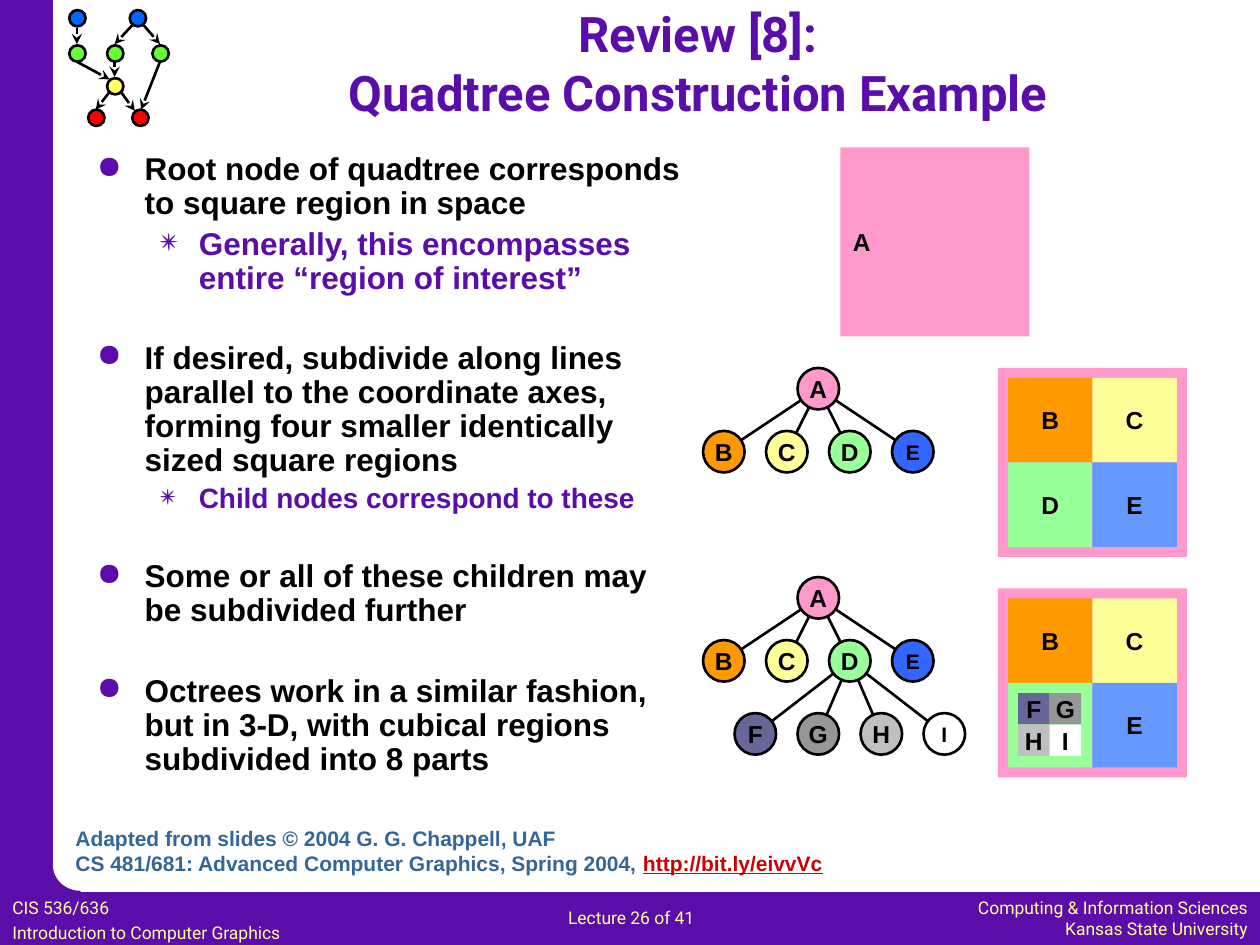
from lxml.etree import SubElement
from pptx import Presentation
from pptx.dml.color import RGBColor
from pptx.enum.shapes import MSO_CONNECTOR, MSO_SHAPE
from pptx.enum.text import MSO_ANCHOR, PP_ALIGN
from pptx.oxml.ns import qn
from pptx.util import Inches, Pt

PURPLE = RGBColor(0x5B, 0x0D, 0xAA)
WHITE = RGBColor(0xFF, 0xFF, 0xFF)
BLACK = RGBColor(0x00, 0x00, 0x00)
PINK = RGBColor(0xFF, 0x99, 0xCC)
ORANGE = RGBColor(0xFF, 0x99, 0x00)
PALE_YELLOW = RGBColor(0xFF, 0xFF, 0x99)
PALE_GREEN = RGBColor(0x99, 0xFF, 0x99)
BLUE = RGBColor(0x33, 0x66, 0xFF)
PALE_BLUE = RGBColor(0x66, 0x99, 0xFF)
SLATE = RGBColor(0x66, 0x66, 0x99)
GRAY = RGBColor(0x96, 0x96, 0x96)
SILVER = RGBColor(0xC0, 0xC0, 0xC0)
ICON_GREEN = RGBColor(0x66, 0xFF, 0x33)
ICON_BLUE = RGBColor(0x00, 0x66, 0xFF)
ICON_YELLOW = RGBColor(0xFF, 0xFF, 0x66)
RED = RGBColor(0xFF, 0x00, 0x00)
STEEL = RGBColor(0x33, 0x66, 0x99)
LINK_RED = RGBColor(0xCC, 0x00, 0x00)

NODE = 0.33
ICON_NODE = 0.13
QUADRANTS = [("B", ORANGE), ("C", PALE_YELLOW), ("D", PALE_GREEN), ("E", PALE_BLUE)]
SUBQUADRANTS = [("F", SLATE), ("G", GRAY), ("H", SILVER), ("I", WHITE)]
CHILDREN = QUADRANTS[:3] + [("E", BLUE)]
BODY = [
    (0, 18, 0, "Root node of quadtree corresponds to square region in space"),
    (1, 18, 3.6, "Generally, this encompasses entire “region of interest”"),
    (0, 18, 26.5, "If desired, subdivide along lines parallel to the coordinate axes, "
                  "forming four smaller identically sized square regions"),
    (1, 16, 3.2, "Child nodes correspond to these"),
    (0, 18, 26.5, "Some or all of these children may be subdivided further"),
    (0, 18, 26.5, "Octrees work in a similar fashion, but in 3-D, with cubical regions "
                  "subdivided into 8 parts"),
]
LEVELS = [("●", 0.38, 0.38, BLACK), ("✴", 0.81, 0.31, PURPLE)]


def write_text(para, text, *, size=14, color=BLACK, font="Arial", bold=True,
               underline=None, align=PP_ALIGN.LEFT, before=0):
    para.alignment = align
    para.space_before = Pt(before)
    span = para.add_run()
    span.text = text
    span.font.name = font
    span.font.size = Pt(size)
    span.font.bold = bold
    span.font.underline = underline
    span.font.color.rgb = color


def next_para(frame):
    first = frame.paragraphs[0]
    return first if not first.runs else frame.add_paragraph()


def add_frame(page, left, top, width, height, wrap=True):
    box = page.shapes.add_textbox(Inches(left), Inches(top), Inches(width), Inches(height))
    box.text_frame.word_wrap = wrap
    return box.text_frame


def add_block(page, left, top, width, height, fill, kind=MSO_SHAPE.RECTANGLE,
              outlined=False, label="", size=14):
    block = page.shapes.add_shape(kind, Inches(left), Inches(top), Inches(width), Inches(height))
    block.shadow.inherit = False
    block.fill.solid()
    block.fill.fore_color.rgb = fill
    if outlined:
        block.line.color.rgb = BLACK
        block.line.width = Pt(1.5)
    else:
        block.line.fill.background()
    if label:
        frame = block.text_frame
        frame.word_wrap = False
        frame.vertical_anchor = MSO_ANCHOR.MIDDLE
        frame.margin_left = frame.margin_right = frame.margin_top = frame.margin_bottom = 0
        write_text(frame.paragraphs[0], label, size=size, align=PP_ALIGN.CENTER)
    return block


def add_edge(page, start, end, arrow=False):
    edge = page.shapes.add_connector(MSO_CONNECTOR.STRAIGHT, *map(Inches, start + end))
    edge.line.color.rgb = BLACK
    edge.line.width = Pt(1.5)
    if arrow:
        SubElement(edge.line._get_or_add_ln(), qn("a:tailEnd"), type="stealth")
    SubElement(edge._element.spPr, qn("a:effectLst"))


def add_frame_bars(page, width, height):
    bar = 0.42
    add_block(page, 0, height - bar, width, bar, PURPLE)
    add_block(page, 0, 0, bar, height, PURPLE)
    add_block(page, 0.2, 6.85, 0.44, 0.44, PURPLE)
    add_block(page, bar, 6.66, 0.44, 0.41, WHITE, MSO_SHAPE.OVAL)


def add_network_icon(page, left, top):
    nodes = [(0, 0.28, ICON_GREEN), (0, 0, ICON_BLUE), (0.3, 0.28, ICON_GREEN),
             (0.48, 0, ICON_BLUE), (0.66, 0.28, ICON_GREEN), (0.3, 0.54, ICON_YELLOW),
             (0.15, 0.79, RED), (0.5, 0.79, RED)]
    edges = [(0.06, 0.14, 0.06, 0.27), (0.5, 0.12, 0.36, 0.27), (0.59, 0.12, 0.72, 0.27),
             (0.06, 0.41, 0.32, 0.55), (0.36, 0.41, 0.36, 0.53), (0.72, 0.41, 0.57, 0.79),
             (0.41, 0.65, 0.52, 0.8), (0.32, 0.65, 0.21, 0.79)]
    for x, y, fill in nodes:
        add_block(page, left + x, top + y, ICON_NODE, ICON_NODE, fill, MSO_SHAPE.OVAL, True)
    for x1, y1, x2, y2 in edges:
        add_edge(page, (left + x1, top + y1), (left + x2, top + y2), arrow=True)


def add_title(page, left, top, width, height):
    frame = add_frame(page, left, top, width, height)
    frame.vertical_anchor = MSO_ANCHOR.MIDDLE
    for text in ("Review [8]:", "Quadtree Construction Example"):
        write_text(next_para(frame), text, size=28, color=PURPLE, font="Roboto",
                   align=PP_ALIGN.CENTER)


def add_body(page, left, top, width, height):
    frame = add_frame(page, left, top, width, height)
    for level, size, before, text in BODY:
        bullet, margin, hanging, color = LEVELS[level]
        para = next_para(frame)
        para.level = level
        para.line_spacing = 0.9
        props = para._p.get_or_add_pPr()
        props.set("marL", str(Inches(margin)))
        props.set("indent", str(-Inches(hanging)))
        bullet_color = SubElement(props, qn("a:buClr"))
        SubElement(bullet_color, qn("a:srgbClr"), val=str(PURPLE))
        SubElement(props, qn("a:buChar"), char=bullet)
        write_text(para, text, size=size, color=color, before=before)


def add_tree(page, left, top, subdivided=False):
    nodes = {"A": (left + 0.75, top, PINK)}
    families = [("A", left, top + 0.5, CHILDREN)]
    if subdivided:
        families.append(("D", left + 0.25, top + 1.08, SUBQUADRANTS))
    edges = []
    for parent, x, y, children in families:
        for index, (label, fill) in enumerate(children):
            nodes[label] = (x + 0.5 * index, y, fill)
            edges.append((parent, label))
    for ends in edges:
        start, end = [(nodes[name][0] + NODE / 2, nodes[name][1] + NODE / 2) for name in ends]
        add_edge(page, start, end)
    for label, (x, y, fill) in nodes.items():
        add_block(page, x, y, NODE, NODE, fill, MSO_SHAPE.OVAL, True, label,
                  12 if label in "EI" else 14)


def add_grid(page, left, top, cell, regions, covered=""):
    for index, (label, fill) in enumerate(regions):
        row, column = divmod(index, 2)
        add_block(page, left + column * cell, top + row * cell, cell, cell, fill,
                  label="" if label == covered else label)


def add_region(page, left, top, size, subdivided=False):
    add_block(page, left, top, size, size, PINK)
    add_grid(page, left + 0.08, top + 0.08, 0.67, QUADRANTS, "D" if subdivided else "")
    if subdivided:
        add_grid(page, left + 0.16, top + 0.83, 0.25, SUBQUADRANTS)


def add_root_region(page, left, top, size):
    frame = add_block(page, left, top, size, size, PINK).text_frame
    frame.vertical_anchor = MSO_ANCHOR.MIDDLE
    write_text(frame.paragraphs[0], "A")


def add_credit(page, left, top, width, height):
    frame = add_frame(page, left, top, width, height, wrap=False)
    write_text(next_para(frame), "Adapted from slides © 2004 G. G. Chappell, UAF",
               size=12, color=STEEL)
    para = next_para(frame)
    write_text(para, "CS 481/681: Advanced Computer Graphics, Spring 2004, ",
               size=12, color=STEEL)
    write_text(para, "http://bit.ly/eivvVc", size=12, color=LINK_RED, underline=True)


def add_footer(page, top):
    parts = [
        (0, 0, 2.95, PP_ALIGN.LEFT, 2, ["CIS 536/636", "Introduction to Computer Graphics"]),
        (4.41, 0.08, 1.52, PP_ALIGN.LEFT, 0, ["Lecture 26 of 41"]),
        (7.18, 0, 2.82, PP_ALIGN.RIGHT, 0,
         ["Computing & Information Sciences", "Kansas State University"]),
    ]
    for left, drop, width, align, gap, lines in parts:
        frame = add_frame(page, left, top + drop, width, 0.1 + 0.17 * len(lines), wrap=False)
        for index, text in enumerate(lines):
            write_text(next_para(frame), text, size=10, color=PALE_YELLOW, font="Roboto",
                       bold=False, align=align, before=gap if index else 0)


def main():
    deck = Presentation()
    deck.slide_width, deck.slide_height = Inches(10), Inches(7.5)
    page = deck.slides.add_slide(deck.slide_layouts[6])
    add_frame_bars(page, 10, 7.5)
    add_network_icon(page, 0.55, 0.08)
    add_footer(page, 7.07)
    add_title(page, 1.25, 0.08, 8.58, 0.83)
    add_body(page, 0.67, 1.17, 4.92, 5.17)
    add_root_region(page, 6.67, 1.17, 1.5)
    add_tree(page, 5.58, 2.92)
    add_region(page, 7.92, 2.92, 1.5)
    add_tree(page, 5.58, 4.58, subdivided=True)
    add_region(page, 7.92, 4.67, 1.5, subdivided=True)
    add_credit(page, 0.5, 6.5, 6.19, 0.5)
    deck.save("out.pptx")


if __name__ == "__main__":
    main()
